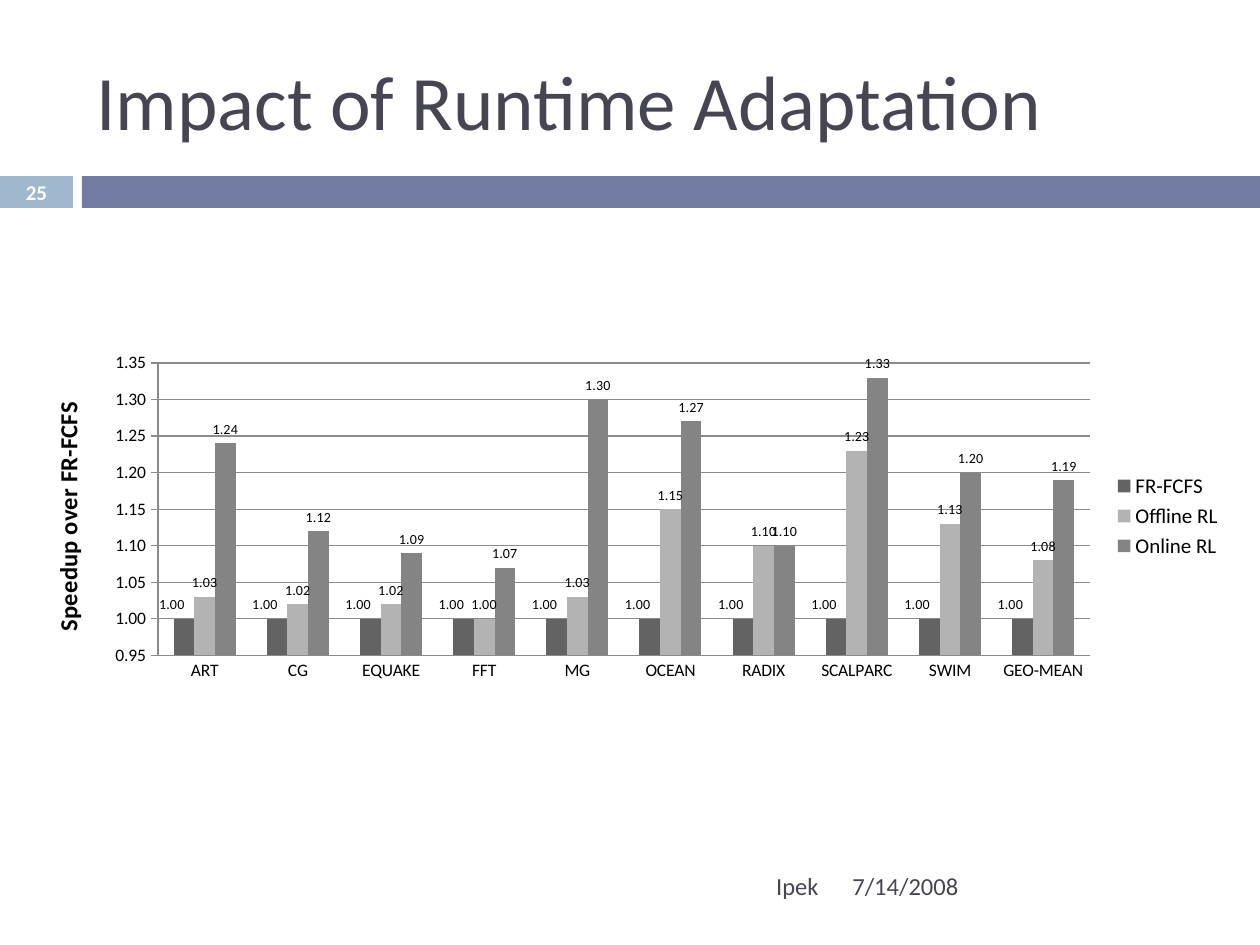
from lxml import etree
from pptx import Presentation
from pptx.chart.data import CategoryChartData
from pptx.dml.color import RGBColor
from pptx.enum.chart import XL_CHART_TYPE, XL_LABEL_POSITION, XL_LEGEND_POSITION, XL_TICK_MARK
from pptx.enum.shapes import MSO_SHAPE
from pptx.enum.text import MSO_ANCHOR, PP_ALIGN
from pptx.oxml import parse_xml
from pptx.util import Pt

LEFT, CENTER, RIGHT = PP_ALIGN.LEFT, PP_ALIGN.CENTER, PP_ALIGN.RIGHT
PX = 914400 / 126
FONT = "Calibri"
INK, GRID = "464653", "8B8B8B"
C_NS = "http://schemas.openxmlformats.org/drawingml/2006/chart"


def rgb(value):
    return RGBColor.from_string(value)


def put_text(sp, box, text, size, color, align, bold=False):
    """Place a text shape (box in px) and fill it with one run."""
    sp.left, sp.top, sp.width, sp.height = [round(v * PX) for v in box]
    tf = sp.text_frame
    tf.word_wrap = True
    tf.vertical_anchor = MSO_ANCHOR.MIDDLE
    p = tf.paragraphs[0]
    p.alignment = align
    r = p.add_run()
    r.text = text
    r.font.name, r.font.size, r.font.bold = FONT, Pt(size), bold
    r.font.color.rgb = rgb(color)


prs = Presentation()
prs.slide_width, prs.slide_height = round(1260 * PX), round(945 * PX)
s = prs.slides.add_slide(prs.slide_layouts[5])

# Header band
for x, w, color in [(0, 73, "9FB8CD"), (82, 1178, "727CA3")]:
    sp = s.shapes.add_shape(MSO_SHAPE.RECTANGLE, *[round(v * PX) for v in (x, 176, w, 32)])
    sp.shadow.inherit = False
    sp.fill.solid()
    sp.fill.fore_color.rgb = rgb(color)
    sp.line.fill.background()

# Title, date, author and slide number
put_text(s.shapes.title, (84, 32, 1124, 136), "Impact of Runtime Adaptation", 44, INK, LEFT)
for box, text, size, color, align, bold in [
    ((840, 861, 368, 50), "7/14/2008", 14, INK, LEFT, False),
    ((84, 861, 747, 50), "Ipek", 14, INK, RIGHT, False),
    ((0, 175, 73, 34), "25", 12, "FFFFFF", CENTER, True),
]:
    put_text(s.shapes.add_textbox(0, 0, 0, 0), box, text, size, color, align, bold)

# Speedup chart
series = [
    ("FR-FCFS", "636363", [1] * 10),
    ("Offline RL", "B3B3B3", [1.03, 1.02, 1.02, 1, 1.03, 1.15, 1.1, 1.23, 1.13, 1.08]),
    ("Online RL", "848484", [1.24, 1.12, 1.09, 1.07, 1.3, 1.27, 1.1, 1.33, 1.2, 1.19]),
]
data = CategoryChartData(number_format="0.00")
data.categories = ["ART", "CG", "EQUAKE", "FFT", "MG", "OCEAN", "RADIX", "SCALPARC",
                   "SWIM", "GEO-MEAN"]
for name, _, values in series:
    data.add_series(name, values)
chart = s.shapes.add_chart(XL_CHART_TYPE.COLUMN_CLUSTERED,
                           *[round(v * PX) for v in (25, 346, 1210, 340)], data).chart
chart.has_title = False
chart.font.name, chart.font.size = FONT, Pt(18)
chart.font.color.rgb = rgb("000000")
chart.has_legend = True
chart.legend.position = XL_LEGEND_POSITION.RIGHT
chart.legend.include_in_layout = False
chart.legend.font.size = Pt(12)

val_axis, cat_axis = chart.value_axis, chart.category_axis
val_axis.minimum_scale, val_axis.maximum_scale, val_axis.major_unit = 0.95, 1.35, 0.05
val_axis.major_tick_mark = XL_TICK_MARK.CROSS
val_axis.tick_labels.number_format = "0.00"
val_axis.tick_labels.number_format_is_linked = False
val_axis.major_gridlines.format.line.color.rgb = rgb(GRID)
cat_axis.major_tick_mark = XL_TICK_MARK.NONE
for axis in (val_axis, cat_axis):
    axis.tick_labels.font.size = Pt(10)
    axis.format.line.color.rgb = rgb(GRID)
r = val_axis.axis_title.text_frame.paragraphs[0].add_run()
r.text = "Speedup over FR-FCFS"
r.font.name, r.font.size, r.font.bold = FONT, Pt(14), True

plot = chart.plots[0]
plot.gap_width, plot.overlap, plot.vary_by_categories = 150, 0, False
for ser, (_, color, _) in zip(plot.series, series):
    ser.format.fill.solid()
    ser.format.fill.fore_color.rgb = rgb(color)
    labels = ser.data_labels
    labels.show_value = True
    labels.position = XL_LABEL_POSITION.OUTSIDE_END
    labels.number_format, labels.number_format_is_linked = "0.00", False
    labels.font.size = Pt(8)

# Baseline labels move left, clear of the neighbouring bars
baseline = plot.series[0]
for i in range(len(series[0][2])):
    label = baseline.points[i].data_label
    label.font.size = Pt(8)
    label.position = XL_LABEL_POSITION.OUTSIDE_END
for idx in baseline.data_labels._element.findall(f"{{{C_NS}}}dLbl/{{{C_NS}}}idx"):
    idx.addnext(parse_xml(f'<c:layout xmlns:c="{C_NS}"><c:manualLayout>'
                          '<c:x val="-0.01"/><c:y val="0"/></c:manualLayout></c:layout>'))

# Fixed inner plot area, as fractions of the chart
area = chart._chartSpace.chart.plotArea
for old in area.findall(f"{{{C_NS}}}layout"):
    area.remove(old)
layout = etree.Element(f"{{{C_NS}}}layout")
manual = etree.SubElement(layout, f"{{{C_NS}}}manualLayout")
for tag, val in [("layoutTarget", "inner"), ("xMode", "edge"), ("yMode", "edge"),
                 ("x", "0.11"), ("y", "0.05"), ("w", "0.77"), ("h", "0.86")]:
    etree.SubElement(manual, f"{{{C_NS}}}{tag}", val=val)
area.insert(0, layout)

prs.save("out.pptx")
